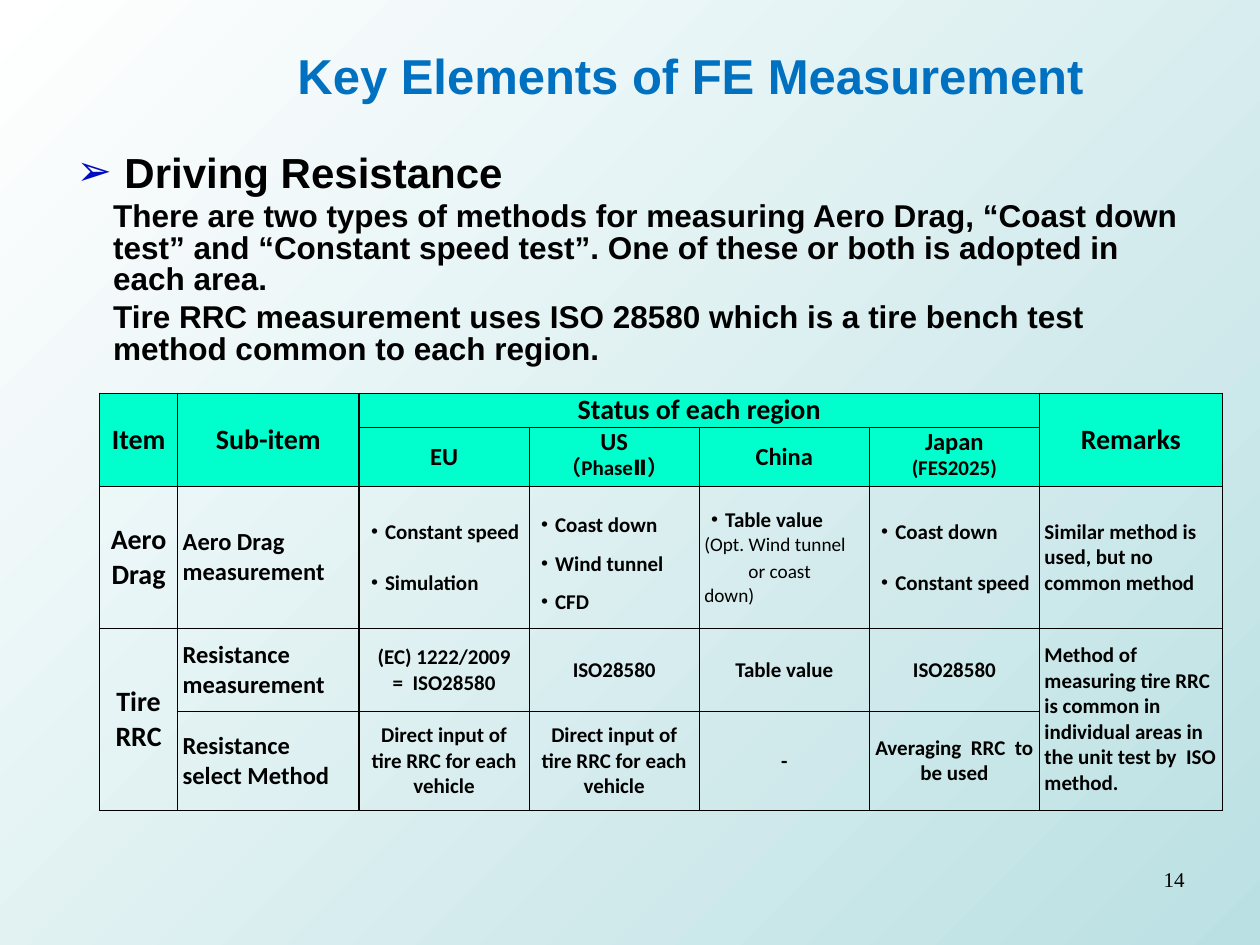
from dataclasses import dataclass

from lxml import etree
from pptx import Presentation
from pptx.dml.color import RGBColor
from pptx.enum.text import MSO_ANCHOR, PP_ALIGN
from pptx.oxml.ns import qn
from pptx.util import Inches, Pt

LEFT, CENTER, RIGHT = PP_ALIGN.LEFT, PP_ALIGN.CENTER, PP_ALIGN.RIGHT
MIDDLE = MSO_ANCHOR.MIDDLE
BLACK, HEADER_FILL = "000000", "00FFCC"
COLUMN_WIDTHS = (0.62, 1.44, 1.35, 1.35, 1.35, 1.35, 1.45)
ROW_HEIGHTS = (0.27, 0.47, 1.13, 0.66, 0.78)
HEADER_ROWS = 2
THICK_COLUMN_EDGES = {1, 2}
THICK_ROW_EDGES = {2, 3}


@dataclass
class Line:
    """One paragraph of text in a table cell."""
    text: str
    size: float = 12
    bold: bool = True
    spacing: object = None
    before: float = 0
    indent: float = 0


def rgb(value):
    """Turn a hex string into a colour."""
    return RGBColor.from_string(value)


def add_span(para, text, size, font="Arial", color=BLACK, bold=True):
    """Add one formatted run to a paragraph."""
    span = para.add_run()
    span.text = text
    span.font.name = font
    span.font.size = Pt(size)
    span.font.bold = bold
    span.font.color.rgb = rgb(color)
    etree.SubElement(span._r.get_or_add_rPr(), qn("a:ea"), typeface=font)


def add_box(page, left, top, width, height):
    """Add a wrapping text box and return its frame."""
    box = page.shapes.add_textbox(*map(Inches, (left, top, width, height)))
    box.text_frame.word_wrap = True
    return box.text_frame


def set_indent(para, margin, first):
    """Set the left margin and first-line indent of a paragraph."""
    properties = para._p.get_or_add_pPr()
    properties.set("marL", str(Inches(margin)))
    properties.set("indent", str(Inches(first)))
    return properties


def set_bullet(para, symbol, color):
    """Give a paragraph a coloured bullet and a hanging indent."""
    properties = set_indent(para, 0.38, -0.38)
    bullet_color = etree.SubElement(properties, qn("a:buClr"))
    etree.SubElement(bullet_color, qn("a:srgbClr"), val=color)
    etree.SubElement(properties, qn("a:buFont"), typeface="Arial")
    etree.SubElement(properties, qn("a:buChar"), char=symbol)


def set_background(page):
    """Fill the page with a diagonal gradient."""
    fill = page.background.fill
    fill.gradient()
    fill.gradient_angle = 315
    for stop, color in zip(fill.gradient_stops, ("FFFFFF", "BBE0E3")):
        stop.color.rgb = rgb(color)


def add_title(page):
    """Add the page title."""
    frame = add_box(page, 1.46, 0.3, 8.04, 0.48)
    frame.margin_top = Inches(0.06)
    para = frame.paragraphs[0]
    para.alignment = CENTER
    add_span(para, "Key Elements of FE Measurement", 28, color="0070C0")


def add_body(page):
    """Add the bulleted heading and its two paragraphs."""
    frame = add_box(page, 0.51, 1.11, 9, 1.64)
    heading = frame.paragraphs[0]
    set_bullet(heading, "➢", "000CC0")
    add_span(heading, "Driving Resistance", 24)
    for text in (
        "There are two types of methods for measuring Aero Drag, “Coast down test” and "
        "“Constant speed test”. One of these or both is adopted in each area.",
        "Tire RRC measurement uses ISO 28580 which is a tire bench test method common "
        "to each region.",
    ):
        para = frame.add_paragraph()
        set_indent(para, 0.29, 0)
        para.line_spacing = Pt(18)
        para.space_before = Pt(3.6)
        add_span(para, text, 18)


def add_page_number(page):
    """Add the page number."""
    para = add_box(page, 7.17, 6.83, 2.33, 0.52).paragraphs[0]
    para.alignment = RIGHT
    add_span(para, "14", 12, "Times New Roman", bold=False)


def set_border(cell, side, width):
    """Draw one black edge of a cell."""
    properties = cell._tc.get_or_add_tcPr()
    line = etree.SubElement(properties, qn(f"a:ln{side}"), w=str(Pt(width)))
    fill = etree.SubElement(line, qn("a:solidFill"))
    etree.SubElement(fill, qn("a:srgbClr"), val=BLACK)


def style_area(table, row, column, rows, columns):
    """Draw the outer edges and the fill of a cell or merged area."""
    bottom, right = row + rows, column + columns
    for r in range(row, bottom):
        for c in range(column, right):
            cell = table.cell(r, c)
            for side, edge, outer, thick in (
                ("L", c, column, THICK_COLUMN_EDGES),
                ("R", c + 1, right, THICK_COLUMN_EDGES),
                ("T", r, row, THICK_ROW_EDGES),
                ("B", r + 1, bottom, THICK_ROW_EDGES),
            ):
                if edge == outer or cell.is_merge_origin:
                    set_border(cell, side, 1 if outer in thick else 0.75)
            if row < HEADER_ROWS:
                cell.fill.solid()
                cell.fill.fore_color.rgb = rgb(HEADER_FILL)
            else:
                cell.fill.background()


def fill_cell(table, row, column, lines, align=CENTER, rows=1, columns=1):
    """Merge, style and write one table cell."""
    cell = table.cell(row, column)
    if rows * columns > 1:
        cell.merge(table.cell(row + rows - 1, column + columns - 1))
    style_area(table, row, column, rows, columns)
    side = 0.1 if columns > 1 else 0.04
    edge = 0 if columns > 1 else 0.04 if row < HEADER_ROWS else 0.02
    cell.margin_left = cell.margin_right = Inches(side)
    cell.margin_top = cell.margin_bottom = Inches(edge)
    cell.vertical_anchor = MIDDLE
    for index, line in enumerate(lines):
        frame = cell.text_frame
        para = frame.add_paragraph() if index else frame.paragraphs[0]
        para.alignment = align
        if line.indent:
            set_indent(para, 0, line.indent)
        if line.spacing:
            para.line_spacing = line.spacing
        if line.before:
            para.space_before = Pt(line.before)
        add_span(para, line.text, line.size, "Calibri", bold=line.bold)


def region_header(name, detail):
    """Return the two lines of a region heading with a detail."""
    return [Line(name, 14, spacing=Pt(14)), Line(detail, 12, spacing=Pt(14))]


def add_status_table(page):
    """Add the table of methods by region."""
    table = page.shapes.add_table(
        len(ROW_HEIGHTS), len(COLUMN_WIDTHS),
        *map(Inches, (0.79, 3.12, sum(COLUMN_WIDTHS), sum(ROW_HEIGHTS)))).table
    table.first_row = table.horz_banding = False
    for column, width in zip(table.columns, COLUMN_WIDTHS):
        column.width = Inches(width)
    for row, height in zip(table.rows, ROW_HEIGHTS):
        row.height = Inches(height)

    direct_input = [Line("Direct input of tire RRC for each vehicle")]
    cells = (
        (0, 0, [Line("Item", 16)], CENTER, 2),
        (0, 1, [Line("Sub-item", 16)], CENTER, 2),
        (0, 2, [Line("Status of each region", 16)], CENTER, 1, 4),
        (0, 6, [Line("Remarks", 16)], CENTER, 2),
        (1, 2, [Line("EU", 14)]),
        (1, 3, region_header("US", "（PhaseⅡ）")),
        (1, 4, [Line("China", 14)]),
        (1, 5, region_header("Japan", "(FES2025)")),
        (2, 0, [Line("Aero Drag", 16)]),
        (2, 1, [Line("Aero Drag measurement", 14)], LEFT),
        (2, 2, [Line("・Constant speed"), Line("・Simulation", before=14.6)], LEFT),
        (2, 3, [Line(f"・{method}", spacing=1.5)
                for method in ("Coast down", "Wind tunnel", "CFD")], LEFT),
        (2, 4, [Line("・Table value"), Line("(Opt. Wind tunnel", 11, False),
                Line("or coast down)", 11, False, before=2, indent=0.35)], LEFT),
        (2, 5, [Line("・Coast down"), Line("・Constant speed", before=14.6)], LEFT),
        (2, 6, [Line("Similar method is used, but no common method")], LEFT),
        (3, 0, [Line("Tire", 16), Line("RRC", 16)], CENTER, 2),
        (3, 1, [Line("Resistance measurement", 14)], LEFT),
        (3, 2, [Line("(EC) 1222/2009"), Line("=  ISO28580")]),
        (3, 3, [Line("ISO28580")]),
        (3, 4, [Line("Table value")]),
        (3, 5, [Line("ISO28580")]),
        (3, 6, [Line("Method of measuring tire RRC is common in individual areas in "
                     "the unit test by  ISO method.")], LEFT, 2),
        (4, 1, [Line("Resistance select Method", 14)], LEFT),
        (4, 2, direct_input),
        (4, 3, direct_input),
        (4, 4, [Line("-")]),
        (4, 5, [Line("Averaging  RRC  to be used")]),
    )
    for cell in cells:
        fill_cell(table, *cell)


def main():
    """Build and save the deck."""
    deck = Presentation()
    deck.slide_width, deck.slide_height = Inches(10), Inches(7.5)
    page = deck.slides.add_slide(deck.slide_layouts[6])
    set_background(page)
    add_body(page)
    add_page_number(page)
    add_status_table(page)
    add_title(page)
    deck.save("out.pptx")


if __name__ == "__main__":
    main()
